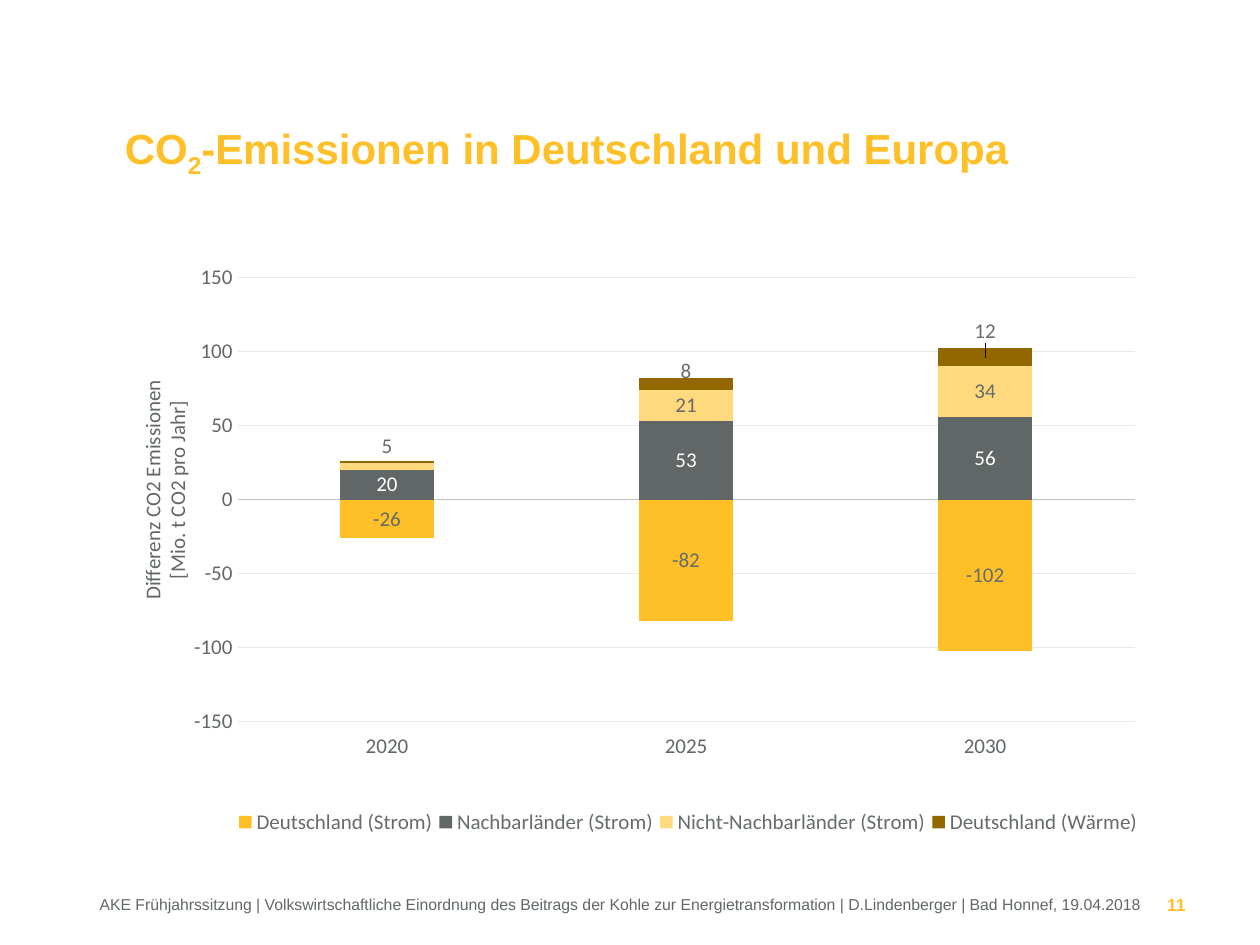
from lxml import etree
from pptx import Presentation
from pptx.chart.data import CategoryChartData
from pptx.dml.color import RGBColor as Rgb
from pptx.enum.chart import XL_CHART_TYPE as Kind, XL_LABEL_POSITION as Spot
from pptx.enum.chart import XL_LEGEND_POSITION as Side, XL_TICK_LABEL_POSITION as Tick
from pptx.enum.chart import XL_TICK_MARK as Mark
from pptx.enum.text import MSO_ANCHOR as Anchor, PP_ALIGN as Align
from pptx.oxml.ns import qn
from pptx.util import Pt

COLORS = {"gold": "FFBF27", "gray": "616767", "sand": "FFD97D", "brown": "936700",
          "label": "666B6B", "white": "FFFFFF", "axis": "BFC3C3", "grid": "E7E8E8"}


def style(font, size, color, name="Calibri", bold=False):
    font.size, font.name, font.bold = Pt(size), name, bold
    font.color.rgb = Rgb.from_string(COLORS[color])


def add_text(text, box, size, color, bold=False, align=Align.LEFT,
             anchor=Anchor.BOTTOM, leading=None):
    """Add a text box; the parts between "~" marks are set as subscript."""
    frame = slide.shapes.add_textbox(*map(Pt, box)).text_frame
    frame.word_wrap = True
    frame.vertical_anchor = anchor
    frame.margin_left = frame.margin_right = frame.margin_top = frame.margin_bottom = 0
    para = frame.paragraphs[0]
    para.alignment = align
    if leading:
        para.line_spacing = Pt(leading)
    for i, part in enumerate(text.split("~")):
        run = para.add_run()
        run.text = part
        style(run.font, size, color, "Arial", bold)
        if i % 2:
            run.font._element.set("baseline", "-25000")


deck = Presentation()
deck.slide_width, deck.slide_height = Pt(720), Pt(540)
slide = deck.slides.add_slide(deck.slide_layouts[6])

# Title
add_text("CO~2~-Emissionen in Deutschland und Europa", (71.28, 70.56, 620.64, 61.92),
         24, "gold", bold=True, anchor=Anchor.TOP, leading=32)

# Chart data: name, values, fill, label colour
rows = [
    ("Deutschland (Strom)", (-26, -82, -102), "gold", "label"),
    ("Nachbarländer (Strom)", (20, 53, 56), "gray", "white"),
    ("Nicht-Nachbarländer (Strom)", (5, 21, 34), "sand", "label"),
    ("Deutschland (Wärme)", (1, 8, 12), "brown", "label"),
]
data = CategoryChartData(number_format="#,##0")
data.categories = ["2020", "2025", "2030"]
for name, vals, *_ in rows:
    data.add_series(name, vals)
chart = slide.shapes.add_chart(Kind.COLUMN_STACKED, Pt(70.56), Pt(139.68),
                               Pt(620.64), Pt(377.28), data).chart
style(chart.font, 14, "label")
chart.has_title = False
plot = chart.plots[0]
plot.gap_width, plot.overlap = 219, 100

# Series and labels
for series, (_, _, fill, ink) in zip(plot.series, rows):
    series.invert_if_negative = False
    series.format.fill.solid()
    series.format.fill.fore_color.rgb = Rgb.from_string(COLORS[fill])
    labels = series.data_labels
    labels.show_value = True
    labels.position = Spot.CENTER
    labels.number_format, labels.number_format_is_linked = "#,##0", False
    style(labels.font, 12, ink)

# Axes
cat, val = chart.category_axis, chart.value_axis
for axis in (cat, val):
    axis.major_tick_mark = axis.minor_tick_mark = Mark.NONE
    style(axis.tick_labels.font, 12, "gray")
cat.tick_label_position = Tick.LOW
val.minimum_scale, val.maximum_scale, val.major_unit = -150, 150, 50
val.tick_labels.number_format = "0"
val.tick_labels.number_format_is_linked = False
val.format.line.fill.background()
for line, color in ((cat.format.line, "axis"), (val.major_gridlines.format.line, "grid")):
    line.width = Pt(0.75)
    line.color.rgb = Rgb.from_string(COLORS[color])
frame = val.axis_title.text_frame
frame.text = "Differenz CO2 Emissionen\n[Mio. t CO2 pro Jahr]"
for para in frame.paragraphs:
    style(para.runs[0].font, 12, "gray")

# Legend
chart.has_legend = True
legend = chart.legend
legend.position, legend.include_in_layout = Side.BOTTOM, False
style(legend.font, 12, "label")


def place(parent, after, **parts):
    """Give a chart part a manual layout, right after the named child."""
    for old in parent.findall(qn("c:layout")):
        parent.remove(old)
    layout = etree.Element(qn("c:layout"))
    manual = etree.SubElement(layout, qn("c:manualLayout"))
    for tag, value in parts.items():
        etree.SubElement(manual, qn("c:" + tag)).set("val", str(value))
    spot = parent.find(qn("c:" + after)) if after else None
    parent.insert(0 if spot is None else parent.index(spot) + 1, layout)


edge = dict(xMode="edge", yMode="edge")
area = chart._chartSpace.find(".//" + qn("c:plotArea"))
place(area, None, layoutTarget="inner", **edge, x=0.105, y=0.05, w=0.826, h=0.673)
place(legend._element, "legendPos", **edge, x=0.1, y=0.85, w=0.84, h=0.05)
place(val.axis_title._element, "tx", **edge, x=0.01, y=0.2)

# Labels lifted above thin bars; the smallest bar has none
for row, col, lift in ((2, 0, -0.03), (3, 0, None), (3, 1, -0.02), (3, 2, -0.04)):
    series = plot.series[row]
    label = series.points[col].data_label
    label.position = Spot.CENTER
    style(label.font, 12, "label")
    node = series._element.findall(".//" + qn("c:dLbl"))[-1]
    if lift is None:
        for child in list(node)[1:]:
            node.remove(child)
        etree.SubElement(node, qn("c:delete")).set("val", "1")
    else:
        place(node, "idx", x=0, y=lift)

# Footer and page number
add_text("AKE Frühjahrssitzung | Volkswirtschaftliche Einordnung des Beitrags der Kohle zur "
         "Energietransformation | D.Lindenberger | Bad Honnef, 19.04.2018",
         (56.88, 510.48, 604.08, 11.52), 9, "gray")
add_text("11", (624.96, 510.48, 52.56, 12.24), 10, "gold", bold=True, align=Align.RIGHT)

deck.save("out.pptx")
